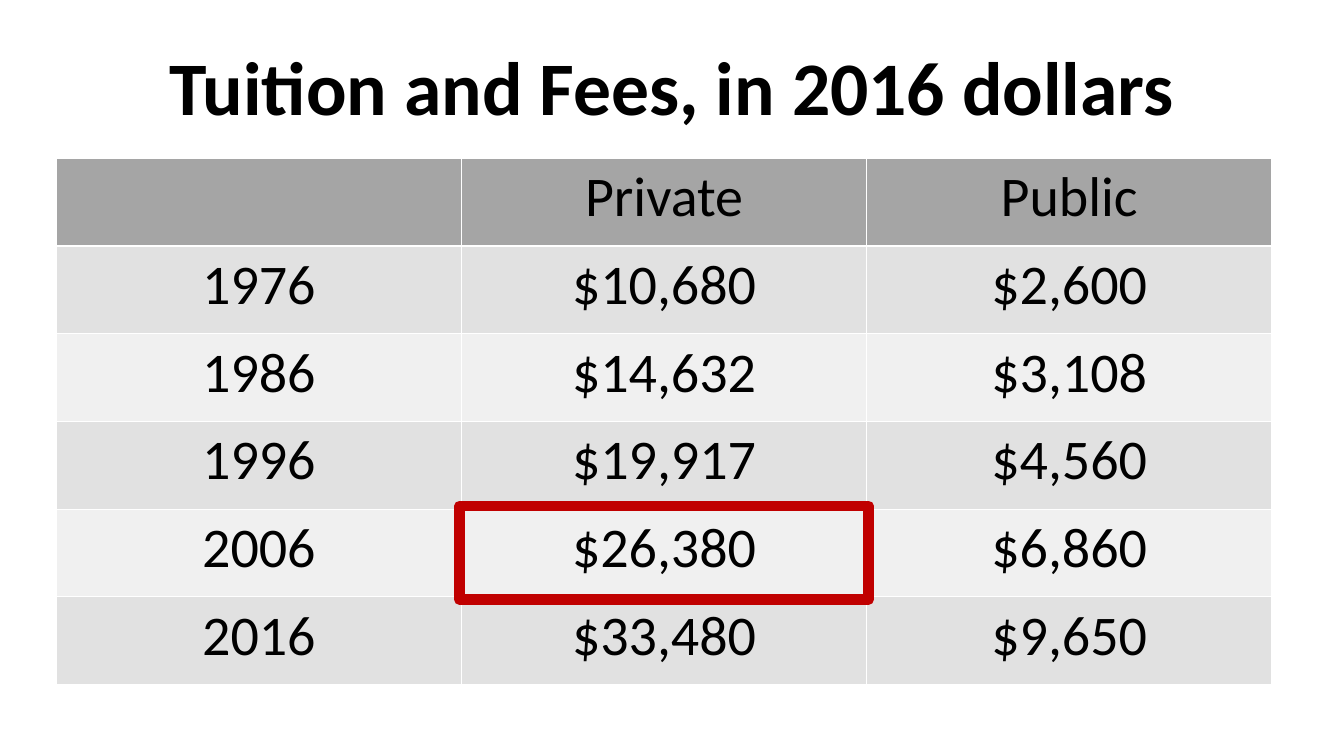
from pptx import Presentation
from pptx.dml.color import RGBColor
from pptx.enum.shapes import MSO_SHAPE
from pptx.enum.text import MSO_ANCHOR, PP_ALIGN
from pptx.util import Cm, Pt

CENTER = PP_ALIGN.CENTER
MIDDLE = MSO_ANCHOR.MIDDLE
RECTANGLE = MSO_SHAPE.RECTANGLE

THEME = {
    "font": "Calibri",
    "text": RGBColor.from_string("000000"),
    "header": RGBColor.from_string("A5A5A5"),
    "bands": [RGBColor.from_string("F0F0F0"), RGBColor.from_string("E1E1E1")],
    "highlight": RGBColor.from_string("C00000"),
    "title_size": Pt(54),
    "table_size": Pt(40),
    "highlight_width": Pt(7.5),
}

TUITION = [
    ("", "Private", "Public"),
    ("1976", "$10,680", "$2,600"),
    ("1986", "$14,632", "$3,108"),
    ("1996", "$19,917", "$4,560"),
    ("2006", "$26,380", "$6,860"),
    ("2016", "$33,480", "$9,650"),
]
COLUMN_WIDTH = Cm(10.21)
ROW_HEIGHT = Cm(2.21)


def write_text(paragraph, text, size, bold):
    paragraph.alignment = CENTER
    font_format = {"name": THEME["font"], "size": size, "bold": bold}
    for attribute, value in font_format.items():
        setattr(paragraph.font, attribute, value)
    paragraph.font.color.rgb = THEME["text"]
    if text:
        run = paragraph.add_run()
        run.text = text
        for attribute, value in font_format.items():
            setattr(run.font, attribute, value)
        run.font.color.rgb = THEME["text"]


presentation = Presentation()
presentation.slide_width = Cm(33.87)
presentation.slide_height = Cm(19.05)
slide = presentation.slides.add_slide(presentation.slide_layouts[6])

title = slide.shapes.add_textbox(Cm(2.33), Cm(0.46), Cm(29.21), Cm(3.68))
title_frame = title.text_frame
for attribute, value in {"word_wrap": True, "vertical_anchor": MIDDLE}.items():
    setattr(title_frame, attribute, value)
title_paragraph = title_frame.paragraphs[0]
title_paragraph.line_spacing = 0.9
write_text(title_paragraph, "Tuition and Fees, in 2016 dollars", THEME["title_size"], True)

row_count, column_count = len(TUITION), len(TUITION[0])
table = slide.shapes.add_table(
    row_count, column_count, Cm(1.42), Cm(3.99),
    COLUMN_WIDTH * column_count, ROW_HEIGHT * row_count,
).table
for column in table.columns:
    column.width = COLUMN_WIDTH
for row_index, values in enumerate(TUITION):
    table.rows[row_index].height = ROW_HEIGHT
    row_color = THEME["bands"][row_index % 2] if row_index else THEME["header"]
    for column_index, value in enumerate(values):
        cell = table.cell(row_index, column_index)
        cell.fill.solid()
        cell.fill.fore_color.rgb = row_color
        write_text(cell.text_frame.paragraphs[0], value, THEME["table_size"], False)

highlight = slide.shapes.add_shape(RECTANGLE, Cm(11.58), Cm(12.75), Cm(10.31), Cm(2.36))
highlight.shadow.inherit = False
highlight.fill.background()
highlight.line.color.rgb = THEME["highlight"]
highlight.line.width = THEME["highlight_width"]

presentation.save("out.pptx")
